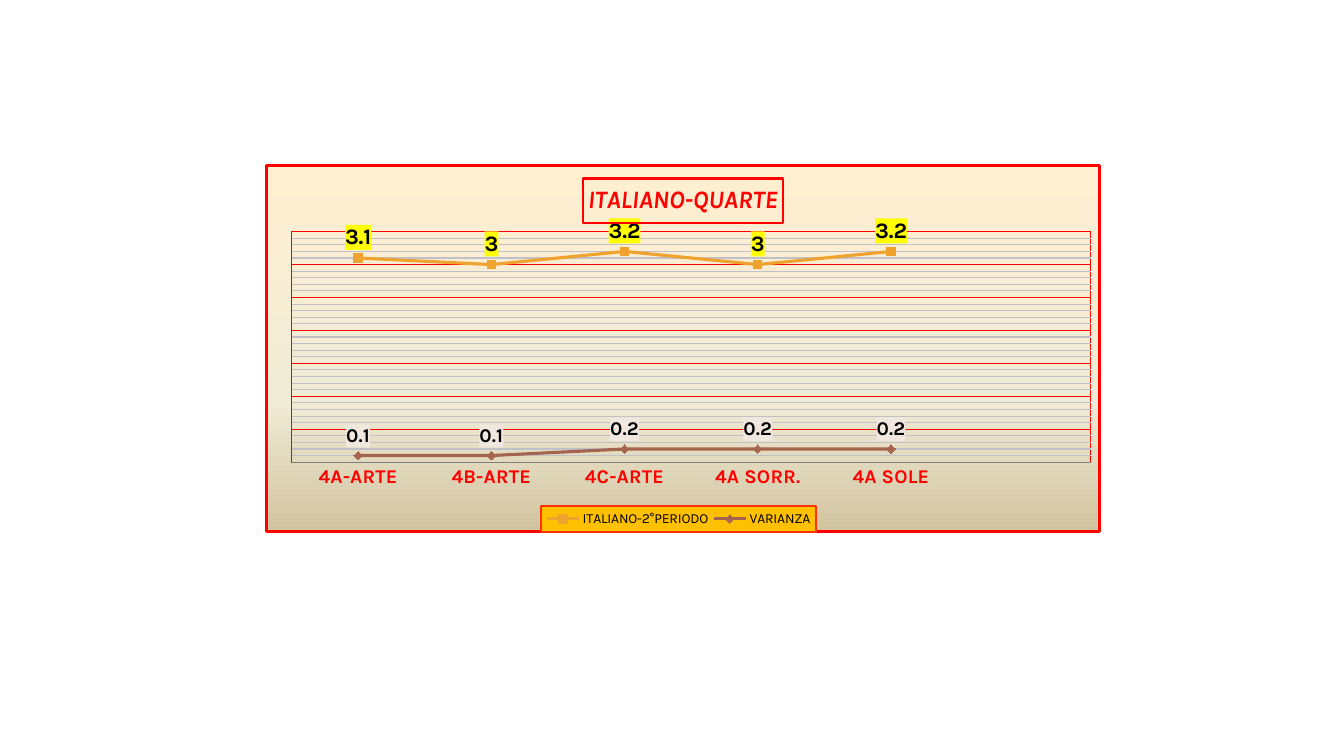
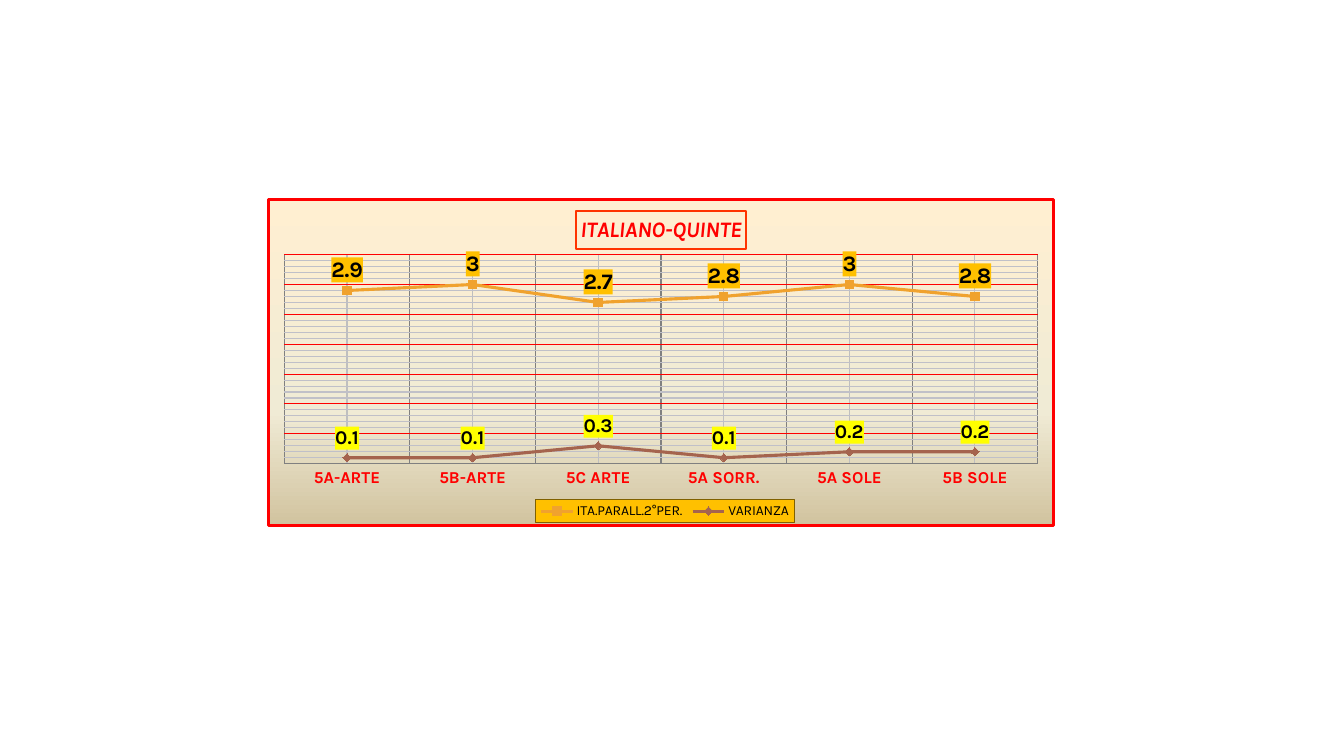
from pptx import Presentation
from pptx import util as u
from pptx.chart.data import CategoryChartData
from pptx.dml.color import RGBColor
from pptx.enum import chart as ch
from pptx.oxml import parse_xml
from pptx.oxml.ns import qn

FONT = "Karla"
HUE = {
    "red": "FF0000", "flame": "FF3300", "black": "000000", "grey": "808080",
    "pale": "BFBFBF", "mist": "C0C0C8", "olive": "7F6000", "gold": "FFC000",
    "yellow": "FFFF00", "shell": "F0E8E0", "amber": "F0A22E", "brown": "A5644E",
}
GRAD = [(0, "FFEFD1"), (65, "F0EBD5"), (100, "D1C39F")]
NS = ('xmlns:c="http://schemas.openxmlformats.org/drawingml/2006/chart" '
      'xmlns:a="http://schemas.openxmlformats.org/drawingml/2006/main"')

SLIDES = [
    {
        "at": (6.68, 4.14, 21.06, 9.3),
        "title": ("ITALIANO-QUARTE", 18, "red"),
        "cats": ["4A-ARTE", "4B-ARTE", "4C-ARTE", "4A SORR.", "4A SOLE", ""],
        "rows": [
            ("ITALIANO-2°PERIODO", [3.1, 3, 3.2, 3, 3.2, None], "yellow"),
            ("VARIANZA", [0.1, 0.1, 0.2, 0.2, 0.2, None], "shell"),
        ],
        "size": 14, "cols": False, "edge": "red",
        "plot": (0.03, 0.18, 0.96, 0.63),
        "key": (0.33, 0.93, 0.33, 0.07), "rim": ("flame", 1.5),
    },
    {
        "at": (6.73, 4.98, 19.86, 8.31),
        "title": ("ITALIANO-QUINTE", 16, "flame"),
        "cats": ["5A-ARTE", "5B-ARTE", "5C ARTE", "5A SORR.", "5A SOLE", "5B SOLE"],
        "rows": [
            ("ITA.PARALL.2°PER.", [2.9, 3, 2.7, 2.8, 3, 2.8], "gold"),
            ("VARIANZA", [0.1, 0.1, 0.3, 0.1, 0.2, 0.2], "yellow"),
        ],
        "size": 12, "cols": True, "edge": "grey",
        "plot": (0.02, 0.17, 0.96, 0.64),
        "key": (0.34, 0.92, 0.33, 0.07), "rim": ("olive", 0.75),
    },
]


def rgb(hue):
    return RGBColor.from_string(HUE[hue])


def style(font, size, hue, bold=False):
    font.name, font.size, font.bold = FONT, u.Pt(size), bold
    font.color.rgb = rgb(hue)


def stroke(line, hue, width):
    line.color.rgb = rgb(hue)
    line.width = u.Pt(width)


def solid(hue):
    return f'<a:solidFill><a:srgbClr val="{HUE[hue]}"/></a:solidFill>'


def blend():
    stops = "".join(f'<a:gs pos="{pos * 1000}"><a:srgbClr val="{tone}"/></a:gs>'
                    for pos, tone in GRAD)
    return f'<a:gradFill><a:gsLst>{stops}</a:gsLst><a:lin ang="5400000" scaled="0"/></a:gradFill>'


def frame(fill, edge=None, width=0):
    """Fill and outline for chart parts that python-pptx cannot format."""
    line = f'<a:ln w="{u.Pt(width)}">{solid(edge)}</a:ln>' if edge else ""
    return parse_xml(f"<c:spPr {NS}>{fill}{line}</c:spPr>")


def before_text(part, shape):
    part.find(qn("c:txPr")).addprevious(shape)


def layout(area, inner=False):
    tags = [("layoutTarget", "inner")] if inner else []
    tags += [("xMode", "edge"), ("yMode", "edge")] + list(zip("xywh", area))
    body = "".join(f'<c:{tag} val="{val}"/>' for tag, val in tags)
    return parse_xml(f"<c:layout {NS}><c:manualLayout>{body}</c:manualLayout></c:layout>")


def set_title(chart, words, size, edge):
    chart.has_title = True
    title = chart.chart_title
    title.text_frame.text = words
    font = title.text_frame.paragraphs[0].runs[0].font
    style(font, size, "red", True)
    font.italic = True
    stroke(title.format.line, edge, 1.5)


def set_grid(axis, major, minor):
    axis.has_major_gridlines = axis.has_minor_gridlines = True
    stroke(axis.major_gridlines.format.line, major, 0.75)
    axis._element.find(qn("c:minorGridlines")).append(frame("", minor, 0.75))


def set_axes(chart, size, cols):
    cat, val = chart.category_axis, chart.value_axis
    style(cat.tick_labels.font, size, "red", True)
    cat.major_tick_mark = cat.minor_tick_mark = ch.XL_TICK_MARK.NONE
    stroke(cat.format.line, "grey", 0.75)
    if cols:
        set_grid(cat, "grey", "pale")
    val.minimum_scale, val.maximum_scale = 0, 3.5
    val.major_unit, val.minor_unit = 0.5, 0.1
    set_grid(val, "red", "mist")
    val.visible = False


def set_row(row, hue, mark, size, back):
    row.smooth = False
    stroke(row.format.line, hue, 2.25)
    row.marker.style, row.marker.size = mark, 6
    row.marker.format.fill.solid()
    row.marker.format.fill.fore_color.rgb = rgb(hue)
    stroke(row.marker.format.line, hue, 0.75)
    tags = row.data_labels
    tags.show_value = True
    tags.position = ch.XL_LABEL_POSITION.ABOVE
    style(tags.font, size, "black", True)
    before_text(row._element.find(qn("c:dLbls")), frame(solid(back)))


def set_key(chart, area, rim):
    chart.has_legend = True
    key = chart.legend
    key.position = ch.XL_LEGEND_POSITION.BOTTOM
    key.include_in_layout = False
    style(key.font, 10, "black")
    root = key._element
    for old in root.findall(qn("c:layout")):
        root.remove(old)
    root.find(qn("c:legendPos")).addnext(layout(area))
    before_text(root, frame(solid("gold"), *rim))


def set_plot(chart, area, edge):
    root = chart._chartSpace.find(".//" + qn("c:plotArea"))
    for old in root.findall(qn("c:layout")):
        root.remove(old)
    root.insert(0, layout(area, inner=True))
    root.append(frame("<a:noFill/>", edge, 0.75))


def add_lines(slide, info):
    data = CategoryChartData()
    data.categories = info["cats"]
    for name, vals, _ in info["rows"]:
        data.add_series(name, vals)
    box = [u.Cm(n) for n in info["at"]]
    chart = slide.shapes.add_chart(ch.XL_CHART_TYPE.LINE_MARKERS, *box, data).chart
    style(chart.font, 10, "black")
    before_text(chart._chartSpace, frame(blend(), "red", 2.25))
    set_title(chart, *info["title"])
    set_axes(chart, info["size"], info["cols"])
    chart.plots[0].vary_by_categories = False
    marks = ch.XL_MARKER_STYLE
    looks = [("amber", marks.SQUARE, 16), ("brown", marks.DIAMOND, 14)]
    for row, look, (_, _, back) in zip(chart.plots[0].series, looks, info["rows"]):
        set_row(row, *look, back)
    set_key(chart, info["key"], info["rim"])
    set_plot(chart, info["plot"], info["edge"])


def main():
    deck = Presentation()
    deck.slide_width, deck.slide_height = u.Cm(33.87), u.Cm(19.05)
    for info in SLIDES:
        add_lines(deck.slides.add_slide(deck.slide_layouts[6]), info)
    deck.save("out.pptx")


if __name__ == "__main__":
    main()
